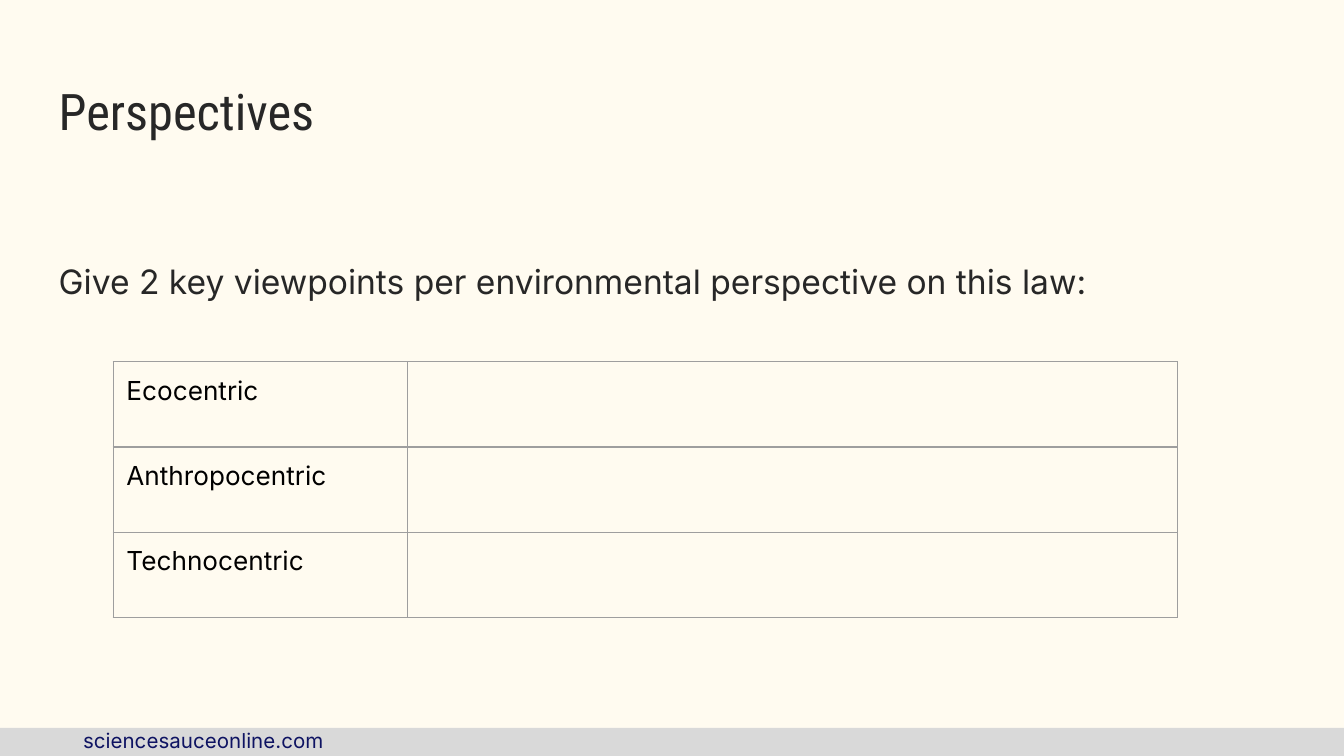
from dataclasses import dataclass

import pptx
import pptx.dml.color
import pptx.enum.shapes
import pptx.enum.text
import pptx.oxml
import pptx.oxml.ns
import pptx.util
from pptx.util import Cm

COLORS = {
    "background": "FFFBF0",
    "footer": "D9D9D9",
    "link": "0E1362",
    "text": "272727",
    "label": "000000",
    "border": "9E9E9E",
}
INSET = Cm(0.25)
BORDER_WIDTH = pptx.util.Pt(0.75)
COLUMN_WIDTHS = (Cm(5.56), Cm(14.55))
ROW_HEIGHT = Cm(1.61)
PERSPECTIVES = ("Ecocentric", "Anthropocentric", "Technocentric")
FRAME_FORMAT = {
    "word_wrap": True,
    "margin_left": INSET,
    "margin_right": INSET,
    "margin_top": INSET,
    "margin_bottom": INSET,
}
CELL_FORMAT = {
    "margin_left": INSET,
    "margin_right": INSET,
    "margin_top": INSET,
    "margin_bottom": INSET,
    "vertical_anchor": pptx.enum.text.MSO_ANCHOR.TOP,
}


@dataclass(frozen=True)
class TextStyle:
    font_name: str
    size: float
    color: str
    line_spacing: float = 1.0


@dataclass(frozen=True)
class TextBlock:
    text: str
    left: float
    top: float
    width: float
    height: float
    style: TextStyle
    anchor: pptx.enum.text.MSO_ANCHOR = pptx.enum.text.MSO_ANCHOR.TOP


LABEL_STYLE = TextStyle("Inter", 14, "label")
TEXT_BLOCKS = (
    TextBlock("sciencesauceonline.com", 1.32, 13.54, 8.48, 0.46,
              TextStyle("Inter", 11, "link")),
    TextBlock("Perspectives", 0.86, 1.24, 23.67, 1.7,
              TextStyle("Roboto Condensed", 27, "text"),
              pptx.enum.text.MSO_ANCHOR.MIDDLE),
    TextBlock("Give 2 key viewpoints per environmental perspective on this law:",
              0.86, 4.56, 23.67, 8.14, TextStyle("Inter", 18, "text", 1.15)),
)


def rgb(name: str) -> pptx.dml.color.RGBColor:
    return pptx.dml.color.RGBColor.from_string(COLORS[name])


def apply_format(target, values: dict) -> None:
    for name, value in values.items():
        setattr(target, name, value)


def write_text(text_frame, text: str, style: TextStyle) -> None:
    paragraph = text_frame.paragraphs[0]
    paragraph.line_spacing = style.line_spacing
    run = paragraph.add_run()
    run.text = text
    apply_format(run.font, {"name": style.font_name, "size": pptx.util.Pt(style.size)})
    run.font.color.rgb = rgb(style.color)


def draw_text(slide, block: TextBlock) -> None:
    shape = slide.shapes.add_textbox(
        Cm(block.left), Cm(block.top), Cm(block.width), Cm(block.height))
    apply_format(shape.text_frame, FRAME_FORMAT | {"vertical_anchor": block.anchor})
    write_text(shape.text_frame, block.text, block.style)


def draw_footer(slide, width: int, height: int) -> None:
    bar_height = Cm(0.53)
    shape = slide.shapes.add_shape(
        pptx.enum.shapes.MSO_SHAPE.RECTANGLE, 0, height - bar_height, width, bar_height)
    shape.shadow.inherit = False
    shape.fill.solid()
    shape.fill.fore_color.rgb = rgb("footer")
    shape.line.fill.background()


def add_borders(cell) -> None:
    properties = cell._tc.get_or_add_tcPr()
    for position, side in enumerate(("lnL", "lnR", "lnT", "lnB")):
        properties.insert(position, pptx.oxml.parse_xml(
            f'<a:{side} {pptx.oxml.ns.nsdecls("a")} w="{BORDER_WIDTH}">'
            f'<a:solidFill><a:srgbClr val="{COLORS["border"]}"/></a:solidFill>'
            f'</a:{side}>'))


def draw_table(slide, left: int, top: int) -> None:
    table = slide.shapes.add_table(
        len(PERSPECTIVES), len(COLUMN_WIDTHS), left, top,
        sum(COLUMN_WIDTHS), ROW_HEIGHT * len(PERSPECTIVES)).table
    apply_format(table, {"first_row": False, "horz_banding": False})
    for column, width in zip(table.columns, COLUMN_WIDTHS):
        column.width = width
    for row, perspective in zip(table.rows, PERSPECTIVES):
        row.height = ROW_HEIGHT
        for cell in row.cells:
            apply_format(cell, CELL_FORMAT)
            cell.fill.background()
            add_borders(cell)
        write_text(row.cells[0].text_frame, perspective, LABEL_STYLE)


def main() -> None:
    presentation = pptx.Presentation()
    apply_format(presentation, {"slide_width": Cm(25.4), "slide_height": Cm(14.29)})
    slide = presentation.slides.add_slide(presentation.slide_layouts[6])
    slide.background.fill.solid()
    slide.background.fill.fore_color.rgb = rgb("background")
    draw_footer(slide, presentation.slide_width, presentation.slide_height)
    for block in TEXT_BLOCKS:
        draw_text(slide, block)
    draw_table(slide, Cm(2.14), Cm(6.84))
    presentation.save("out.pptx")


if __name__ == "__main__":
    main()
